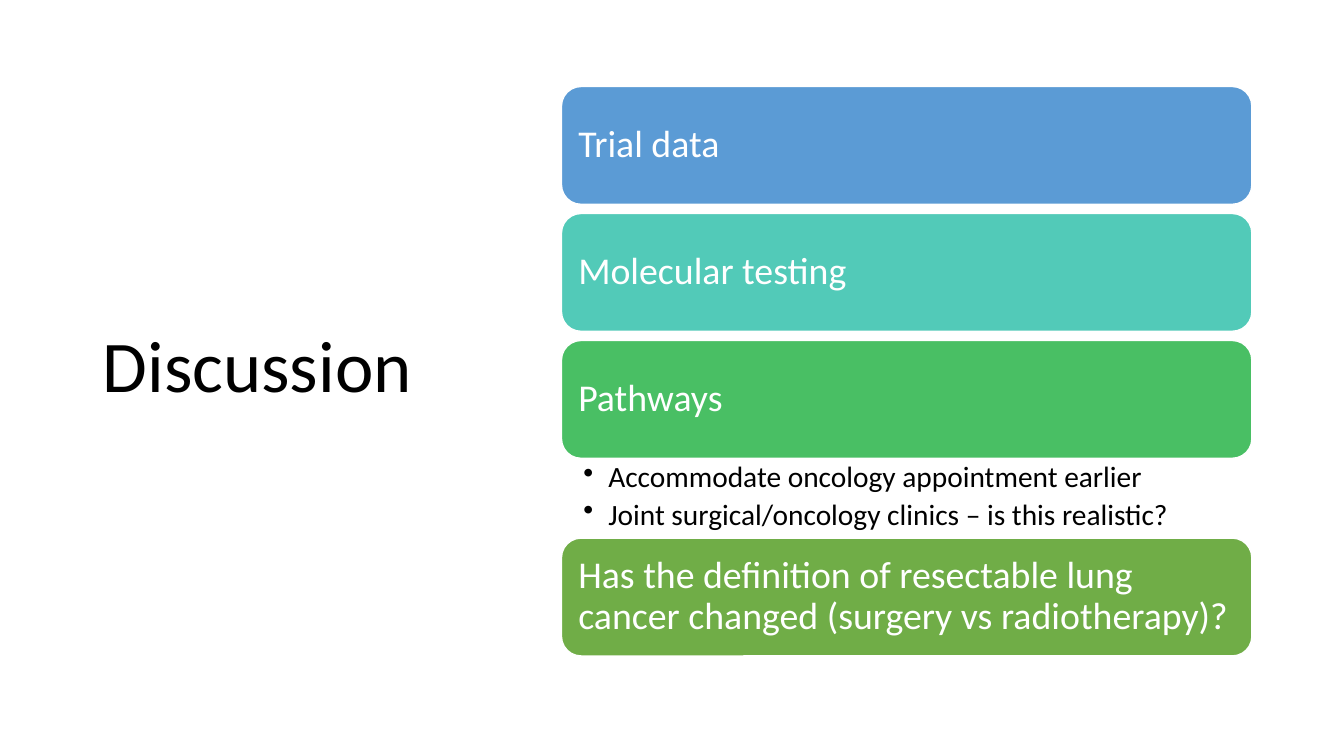
import pptx
import pptx.dml.color
import pptx.enum.shapes
import pptx.enum.text
import pptx.oxml
import pptx.util
from pptx.util import Cm

RGBColor = pptx.dml.color.RGBColor
BLACK = RGBColor(0x00, 0x00, 0x00)
WHITE = RGBColor(0xFF, 0xFF, 0xFF)
BLUE = RGBColor(0x5B, 0x9B, 0xD5)
TEAL = RGBColor(0x52, 0xCA, 0xB8)
GREEN = RGBColor(0x49, 0xBF, 0x64)
OLIVE = RGBColor(0x70, 0xAD, 0x47)

# Topic list geometry, in centimetres
LIST_LEFT, LIST_TOP, LIST_WIDTH = 14.15, 2.18, 17.4
CARD_HEIGHT, CARD_GAP, DETAILS_HEIGHT = 2.97, 0.23, 2.01

TOPICS = [
    ("Trial data", BLUE, []),
    ("Molecular testing", TEAL, []),
    ("Pathways", GREEN, [
        "Accommodate oncology appointment earlier",
        "Joint surgical/oncology clinics – is this realistic?",
    ]),
    ("Has the definition of resectable lung cancer changed "
     "(surgery vs radiotherapy)?", OLIVE, []),
]


class SlideBuilder:
    font_name = "Calibri"
    line_spacing = 0.9

    def __init__(self, slide):
        self.slide = slide

    def set_frame(self, frame, anchor, horizontal, vertical):
        frame.word_wrap = True
        frame.auto_size = pptx.enum.text.MSO_AUTO_SIZE.NONE
        frame.vertical_anchor = anchor
        frame.margin_left = frame.margin_right = Cm(horizontal)
        frame.margin_top = frame.margin_bottom = Cm(vertical)

    def add_text(self, paragraph, text, size, color):
        paragraph.alignment = pptx.enum.text.PP_ALIGN.LEFT
        paragraph.line_spacing = self.line_spacing
        run = paragraph.add_run()
        run.text = text
        run.font.name = self.font_name
        run.font.size = pptx.util.Pt(size)
        run.font.color.rgb = color

    def title(self, text, left, top, width, height):
        shape = self.slide.shapes.title
        shape.left, shape.top = Cm(left), Cm(top)
        shape.width, shape.height = Cm(width), Cm(height)
        self.set_frame(shape.text_frame, pptx.enum.text.MSO_ANCHOR.MIDDLE, 0.25, 0.13)
        self.add_text(shape.text_frame.paragraphs[0], text, 52, BLACK)

    def card(self, text, color, top):
        shape = self.slide.shapes.add_shape(
            pptx.enum.shapes.MSO_SHAPE.ROUNDED_RECTANGLE,
            Cm(LIST_LEFT), Cm(top), Cm(LIST_WIDTH), Cm(CARD_HEIGHT))
        shape.shadow.inherit = False
        shape.fill.solid()
        shape.fill.fore_color.rgb = color
        shape.line.color.rgb = WHITE
        shape.line.width = pptx.util.Pt(1)
        self.set_frame(shape.text_frame, pptx.enum.text.MSO_ANCHOR.MIDDLE, 0.28, 0.28)
        self.add_text(shape.text_frame.paragraphs[0], text, 27, WHITE)

    def bullets(self, items, top):
        box = self.slide.shapes.add_textbox(
            Cm(LIST_LEFT), Cm(top), Cm(LIST_WIDTH), Cm(DETAILS_HEIGHT))
        frame = box.text_frame
        self.set_frame(frame, pptx.enum.text.MSO_ANCHOR.TOP, 0.55, 0.1)
        for index, item in enumerate(items):
            paragraph = frame.add_paragraph() if index else frame.paragraphs[0]
            self.add_text(paragraph, item, 21, BLACK)
            paragraph.level = 1
            paragraph.space_after = pptx.util.Pt(4.2)
            # Bullet with a hanging indent
            properties = paragraph._p.get_or_add_pPr()
            properties.set("marL", str(Cm(0.63)))
            properties.set("indent", str(-Cm(0.63)))
            properties.append(pptx.oxml.parse_xml(
                '<a:buChar xmlns:a="http://schemas.openxmlformats.org/'
                'drawingml/2006/main" char="•"/>'))


def main():
    presentation = pptx.Presentation()
    presentation.slide_width = Cm(33.87)
    presentation.slide_height = Cm(19.05)
    slide = presentation.slides.add_slide(presentation.slide_layouts[5])
    builder = SlideBuilder(slide)

    # Title
    builder.title("Discussion", 2.34, 1.55, 9.37, 15.47)

    # Topics, with details directly under their card
    top = LIST_TOP
    for text, color, details in TOPICS:
        builder.card(text, color, top)
        top += CARD_HEIGHT
        if details:
            builder.bullets(details, top)
            top += DETAILS_HEIGHT
        else:
            top += CARD_GAP

    presentation.save("out.pptx")


if __name__ == "__main__":
    main()
